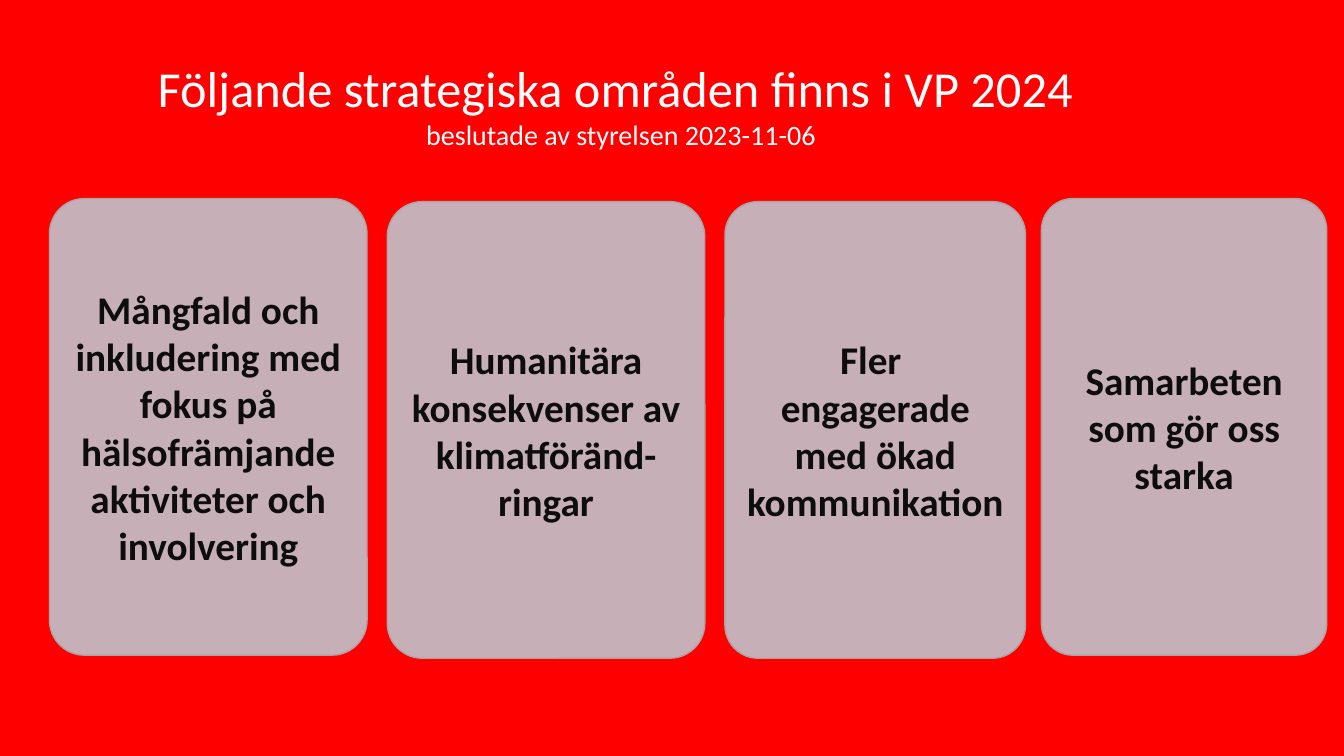
from lxml import etree
from pptx import Presentation, util as u
from pptx.dml.color import RGBColor
from pptx.enum import shapes, text
from pptx.oxml.ns import qn

COLORS = {
    "background": "FF0000",
    "heading": "FFFFFF",
    "card": "C0C3CA",
    "border": "A6A6A6",
    "ink": "0D0D0D",
}
FONT = "Calibri"
SLIDE_W, SLIDE_H = u.Inches(13.33), u.Inches(7.5)

# Positions are percentages of the slide's width and height
HEADING_BOX = (3.68, 6.93, 85.07, 13.87)
CARD_HEIGHT = 60.4
UPPER, LOWER = 26.27, 26.67
AREAS = [  # left, top, width, wording
    (3.68, UPPER, 23.63,
     "Mångfald och inkludering med fokus på hälsofrämjande aktiviteter och involvering"),
    (28.81, LOWER, 23.63, "Humanitära konsekvenser av klimatföränd- ringar"),
    (53.94, LOWER, 22.36, "Fler \vengagerade med ökad kommunikation"),
    (77.49, UPPER, 21.23, "Samarbeten som gör oss starka"),
]


def color(name):
    return RGBColor.from_string(COLORS[name])


def share(left, top, width, height):
    """Turn percentages of the slide into lengths."""
    return (int(SLIDE_W * left / 100), int(SLIDE_H * top / 100),
            int(SLIDE_W * width / 100), int(SLIDE_H * height / 100))


def style_run(run, size, ink, bold=False):
    run.font.name = FONT
    run.font.size = u.Pt(size)
    run.font.bold = bold
    run.font.color.rgb = color(ink)


def add_heading(slide):
    heading = slide.shapes.title
    heading.left, heading.top, heading.width, heading.height = share(*HEADING_BOX)
    frame = heading.text_frame
    frame.text = ("Följande strategiska områden finns i VP 2024 \v"
                  "beslutade av styrelsen 2023-11-06")
    frame.word_wrap = True
    frame.auto_size = text.MSO_AUTO_SIZE.SHAPE_TO_FIT_TEXT
    frame.vertical_anchor = text.MSO_ANCHOR.TOP
    statement = frame.paragraphs[0]
    statement.alignment = text.PP_ALIGN.CENTER
    for run, size in zip(statement.runs, (36, 20)):
        style_run(run, size, "heading")


def add_area_card(slide, left, top, width, wording):
    card = slide.shapes.add_shape(shapes.MSO_SHAPE.ROUNDED_RECTANGLE,
                                  *share(left, top, width, CARD_HEIGHT))
    card.adjustments[0] = 0.11
    card.shadow.inherit = False
    card.line.color.rgb = color("border")
    card.line.width = u.Pt(1)

    # Slightly see-through fill
    card.fill.solid()
    card.fill.fore_color.rgb = color("card")
    tint = card.fill._xPr.find(".//" + qn("a:srgbClr"))
    etree.SubElement(tint, qn("a:alpha"), val="90000")

    # Centred wording
    frame = card.text_frame
    frame.text = wording
    frame.word_wrap = True
    frame.vertical_anchor = text.MSO_ANCHOR.MIDDLE
    frame.margin_left = frame.margin_right = u.Inches(0.12)
    frame.margin_top = frame.margin_bottom = u.Inches(0.12)
    area = frame.paragraphs[0]
    area.alignment = text.PP_ALIGN.CENTER
    area.space_after = u.Pt(8)
    for run in area.runs:
        style_run(run, 28, "ink", bold=True)


def main():
    deck = Presentation()
    deck.slide_width, deck.slide_height = SLIDE_W, SLIDE_H
    slide = deck.slides.add_slide(deck.slide_layouts.get_by_name("Title Only"))
    slide.background.fill.solid()
    slide.background.fill.fore_color.rgb = color("background")

    add_heading(slide)
    for area in AREAS:
        add_area_card(slide, *area)

    deck.save("out.pptx")


if __name__ == "__main__":
    main()
